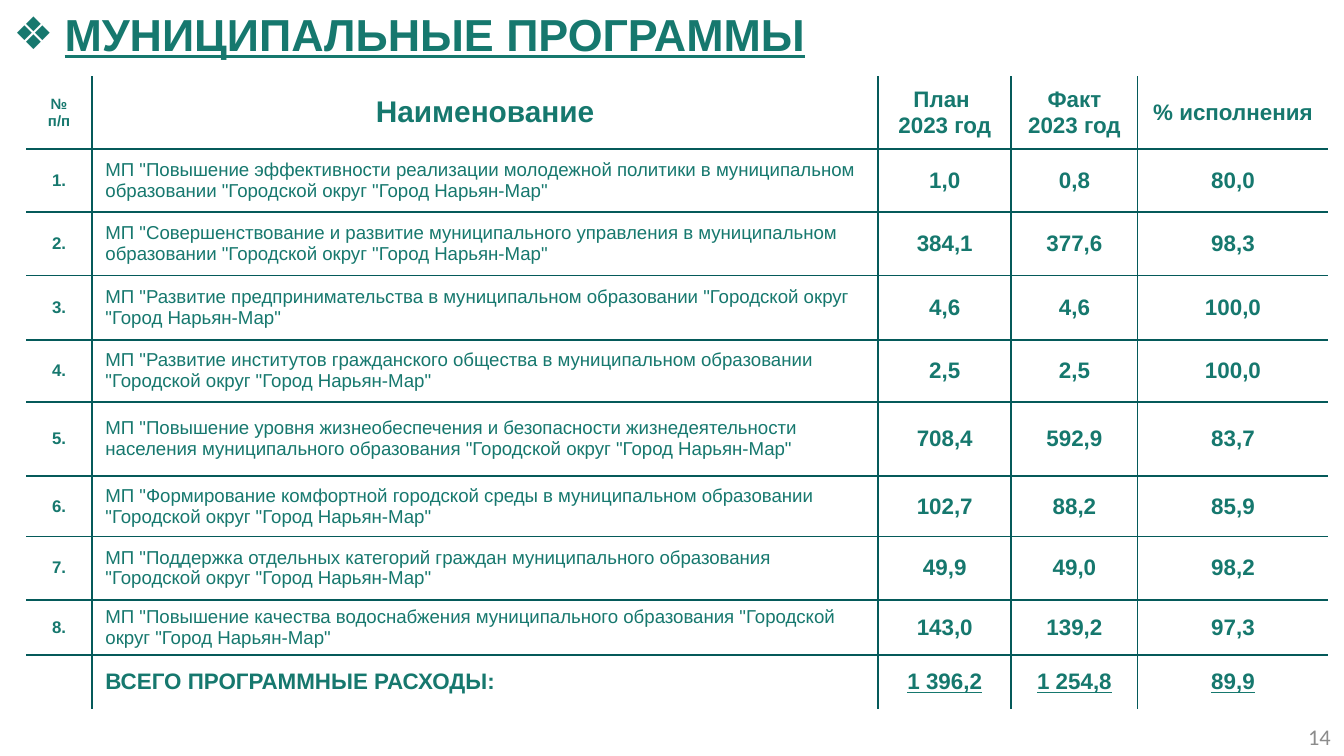
from typing import NamedTuple

from lxml import etree
from pptx import Presentation
from pptx import util as u
from pptx.dml.color import RGBColor
from pptx.enum import text
from pptx.oxml.ns import qn

TEAL = RGBColor(0x16, 0x78, 0x6E)
RULE = RGBColor(0x05, 0x5A, 0x5A)
GRAY = RGBColor(0x8C, 0x8C, 0x8C)
WIDTH = u.Inches(10)
HEIGHT = WIDTH * 9 // 16
COLUMN_SHARES = (0.049, 0.585, 0.099, 0.094, 0.142)
ROW_UNITS = (0.54, 0.47, 0.47, 0.48, 0.46, 0.55, 0.45, 0.47, 0.41, 0.4)
TABLE_HEIGHT = 0.837
CITY = '"Городской округ "Город Нарьян-Мар"'
LEFT, CENTER, RIGHT = (text.PP_ALIGN.LEFT, text.PP_ALIGN.CENTER, text.PP_ALIGN.RIGHT)


class Style(NamedTuple):
    size: float
    bold: bool = True
    underline: bool = False
    align: text.PP_ALIGN = CENTER
    color: RGBColor = TEAL
    font: str = "Arial"


class Program(NamedTuple):
    name: str
    plan: str
    fact: str
    percent: str


class Entry(NamedTuple):
    lines: tuple[str, ...]
    style: Style


TITLE = Style(24, underline=True, align=LEFT)
NAME = Style(10, bold=False, align=LEFT)
NUMBER = Style(9)
VALUE = Style(12)
TOTAL = Style(12, underline=True)
PAGE_NUMBER = Style(12, bold=False, align=RIGHT, color=GRAY, font="Calibri")

HEADER = [
    Entry(("№ п/п",), Style(8)),
    Entry(("Наименование",), Style(16)),
    Entry(("План ", "2023 год"), VALUE),
    Entry(("Факт 2023 год",), VALUE),
    Entry(("% исполнения",), VALUE),
]
PROGRAMS = [
    Program("Повышение эффективности реализации молодежной политики в муниципальном образовании",
            "1,0", "0,8", "80,0"),
    Program("Совершенствование и развитие муниципального управления в муниципальном образовании",
            "384,1", "377,6", "98,3"),
    Program("Развитие предпринимательства в муниципальном образовании", "4,6", "4,6", "100,0"),
    Program("Развитие институтов гражданского общества в муниципальном образовании",
            "2,5", "2,5", "100,0"),
    Program("Повышение уровня жизнеобеспечения и безопасности жизнедеятельности населения "
            "муниципального образования", "708,4", "592,9", "83,7"),
    Program("Формирование комфортной городской среды в муниципальном образовании",
            "102,7", "88,2", "85,9"),
    Program("Поддержка отдельных категорий граждан муниципального образования",
            "49,9", "49,0", "98,2"),
    Program("Повышение качества водоснабжения муниципального образования",
            "143,0", "139,2", "97,3"),
]


def across(share: float) -> int:
    return round(WIDTH * share)


def down(share: float) -> int:
    return round(HEIGHT * share)


def write(frame, lines: tuple[str, ...], style: Style) -> None:
    for index, line in enumerate(lines):
        para = frame.add_paragraph() if index else frame.paragraphs[0]
        para.alignment = style.align
        span = para.add_run()
        span.text = line
        span.font.name = style.font
        span.font.size = u.Pt(style.size)
        span.font.bold = style.bold
        span.font.underline = style.underline
        span.font.color.rgb = style.color


def draw_title(page) -> None:
    title = page.shapes.title
    title.left, title.top = 0, 0
    title.width, title.height = across(0.732), down(0.09)
    frame = title.text_frame
    frame.word_wrap = True
    frame.auto_size = text.MSO_AUTO_SIZE.NONE
    frame.vertical_anchor = text.MSO_ANCHOR.TOP
    properties = frame.paragraphs[0]._p.get_or_add_pPr()
    properties.set("marL", str(u.Inches(0.38)))
    properties.set("indent", str(-u.Inches(0.38)))
    etree.SubElement(properties, qn("a:buFont"), typeface="Arial")
    etree.SubElement(properties, qn("a:buChar"), char="❖")
    write(frame, ("МУНИЦИПАЛЬНЫЕ ПРОГРАММЫ",), TITLE)


def draw_borders(cell, sides: dict[str, bool]) -> None:
    properties = cell._tc.get_or_add_tcPr()
    for side, visible in sides.items():
        line = etree.SubElement(properties, qn(f"a:ln{side}"), w=str(u.Pt(1)))
        if visible:
            fill = etree.SubElement(line, qn("a:solidFill"))
            etree.SubElement(fill, qn("a:srgbClr"), val=str(RULE))
        else:
            etree.SubElement(line, qn("a:noFill"))


def table_entries() -> list[list[Entry]]:
    rows = [HEADER]
    for number, program in enumerate(PROGRAMS, 1):
        values = (program.plan, program.fact, program.percent)
        rows.append([
            Entry((f"{number}.",), NUMBER),
            Entry((f'МП "{program.name} {CITY}',), NAME),
            *(Entry((value,), VALUE) for value in values),
        ])
    rows.append([
        Entry((), NUMBER),
        Entry(("ВСЕГО ПРОГРАММНЫЕ РАСХОДЫ:",), Style(12, align=LEFT)),
        *(Entry((value,), TOTAL) for value in ("1 396,2", "1 254,8", "89,9")),
    ])
    return rows


def draw_table(page) -> None:
    rows = table_entries()
    last_row, last_column = len(rows) - 1, len(COLUMN_SHARES) - 1
    table = page.shapes.add_table(
        len(rows), len(COLUMN_SHARES), across(0.0195), down(0.101),
        across(sum(COLUMN_SHARES)), down(TABLE_HEIGHT)).table
    table.first_row = table.horz_banding = False
    for column, share in zip(table.columns, COLUMN_SHARES):
        column.width = across(share)
    for row, units in zip(table.rows, ROW_UNITS):
        row.height = down(TABLE_HEIGHT * units / sum(ROW_UNITS))
    for r, entries in enumerate(rows):
        for c, entry in enumerate(entries):
            cell = table.cell(r, c)
            cell.margin_left = cell.margin_right = u.Inches(0.1)
            cell.margin_top = cell.margin_bottom = u.Inches(0.04)
            cell.vertical_anchor = text.MSO_ANCHOR.MIDDLE
            draw_borders(cell, {"L": c > 0, "R": c < last_column,
                                "T": r > 0, "B": r < last_row})
            cell.fill.background()
            write(cell.text_frame, entry.lines, entry.style)


def draw_page_number(page) -> None:
    box = page.shapes.add_textbox(across(0.767), down(0.948), across(0.233), down(0.053))
    frame = box.text_frame
    frame.word_wrap = True
    frame.vertical_anchor = text.MSO_ANCHOR.MIDDLE
    write(frame, ("14",), PAGE_NUMBER)


def main() -> None:
    deck = Presentation()
    deck.slide_width, deck.slide_height = WIDTH, HEIGHT
    page = deck.slides.add_slide(deck.slide_layouts[5])
    draw_title(page)
    draw_table(page)
    draw_page_number(page)
    deck.save("out.pptx")


if __name__ == "__main__":
    main()
